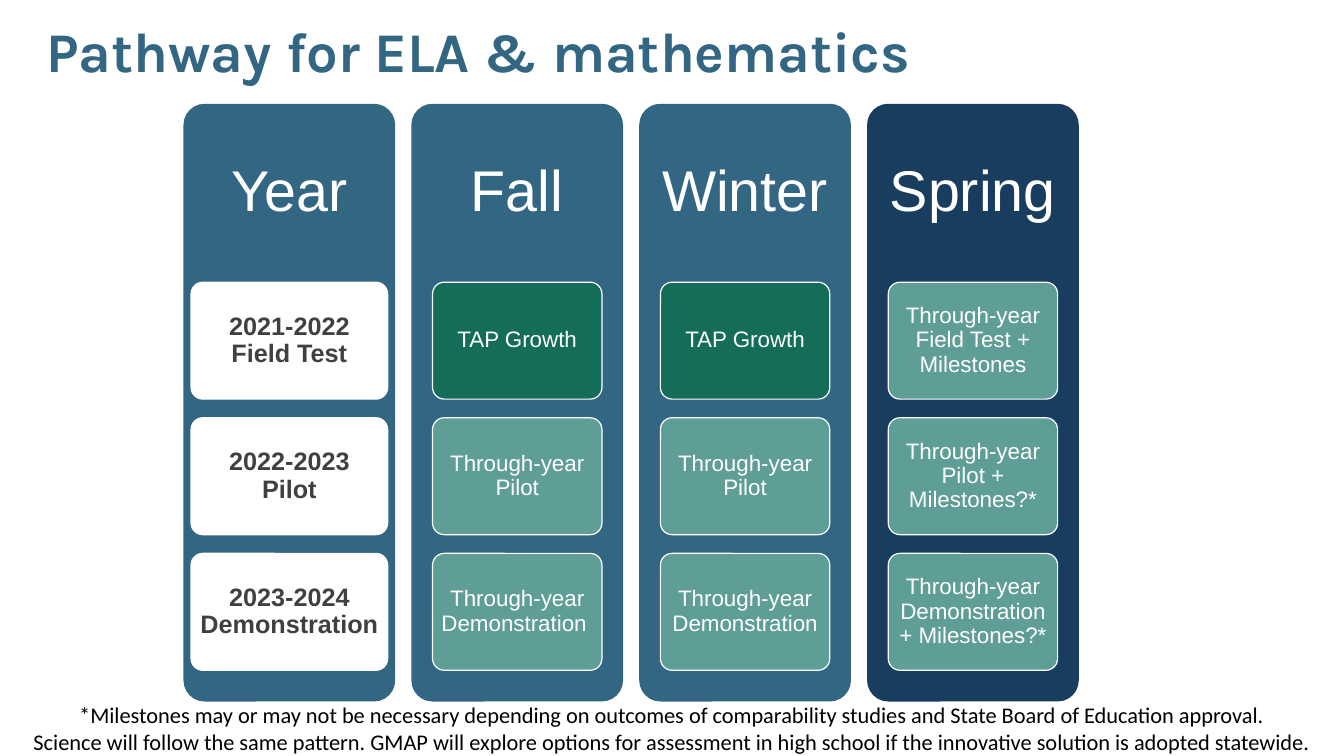
from pptx import Presentation
from pptx.dml.color import RGBColor
from pptx.enum.shapes import MSO_SHAPE
from pptx.enum.text import MSO_ANCHOR, MSO_AUTO_SIZE, PP_ALIGN
from pptx.util import Inches, Pt

WHITE, BLUE, NAVY = "FFFFFF", "336683", "183D5E"
GREEN, TEAL, GRAY = "136D58", "5F9D97", "404040"


def write(frame, lines, color, font_format, insets, anchor=MSO_ANCHOR.MIDDLE,
          align=PP_ALIGN.CENTER, spacing=0.9):
    """Fill a text frame with paragraphs; insets run left, top, right, bottom."""
    frame.text = "\n".join(lines)
    frame.word_wrap = True
    frame.auto_size = MSO_AUTO_SIZE.NONE
    frame.vertical_anchor = anchor
    for side, inset in zip(("left", "top", "right", "bottom"), insets):
        setattr(frame, f"margin_{side}", Inches(inset))
    for paragraph in frame.paragraphs:
        paragraph.alignment = align
        paragraph.line_spacing = spacing
        for run in paragraph.runs:
            run.font.color.rgb = RGBColor.from_string(color)
            for name, value in font_format.items():
                setattr(run.font, name, value)


def rounded_box(left, top, width, height, fill, outline=None):
    box = slide.shapes.add_shape(MSO_SHAPE.ROUNDED_RECTANGLE, Inches(left),
                                 Inches(top), Inches(width), Inches(height))
    box.adjustments[0] = 0.1
    box.shadow.inherit = False
    box.fill.solid()
    box.fill.fore_color.rgb = RGBColor.from_string(fill)
    if outline:
        box.line.color.rgb = RGBColor.from_string(outline)
        box.line.width = Pt(0.85)
    else:
        box.line.fill.background()
    return box


presentation = Presentation()
presentation.slide_width = Inches(13.33)
presentation.slide_height = Inches(7.5)
slide = presentation.slides.add_slide(presentation.slide_layouts[5])

# Title
title = slide.shapes.title
title.left, title.top, title.width, title.height = map(
    Inches, (0.36, 0.19, 11.15, 1.1))
write(title.text_frame, ["Pathway for ELA & mathematics"], BLUE,
      {"name": "Karla", "size": Pt(40), "bold": True}, (0.1, 0.05, 0.1, 0.05),
      MSO_ANCHOR.TOP, PP_ALIGN.LEFT, 0.89)

# Grid of seasons (columns) and school years (rows)
PANEL_LEFT, PANEL_TOP, PANEL_WIDTH, PANEL_HEIGHT = 1.82, 1.03, 2.1, 5.93
COLUMN_STEP = 2.26
CARD_TOP, CARD_HEIGHT, ROW_STEP = 2.8, 1.16, 1.345

year_font = {"name": "Arial", "size": Pt(18), "bold": True}
season_font = {"name": "Arial", "size": Pt(16)}
heading_font = {"name": "Arial", "size": Pt(41)}

# Heading, panel colour, card width, card text colour, card font, cards
columns = [
    ("Year", BLUE, 1.95, GRAY, year_font,
     [("2021-2022\vField Test", WHITE),
      ("2022-2023\vPilot", WHITE),
      ("2023-2024\vDemonstration", WHITE)]),
    ("Fall", BLUE, 1.68, WHITE, season_font,
     [("TAP Growth", GREEN),
      ("Through-year Pilot", TEAL),
      ("Through-year Demonstration ", TEAL)]),
    ("Winter", BLUE, 1.68, WHITE, season_font,
     [("TAP Growth", GREEN),
      ("Through-year Pilot", TEAL),
      ("Through-year Demonstration", TEAL)]),
    ("Spring", NAVY, 1.68, WHITE, season_font,
     [("Through-year Field Test + Milestones", TEAL),
      ("Through-year Pilot + Milestones?*", TEAL),
      ("Through-year Demonstration + Milestones?*", TEAL)]),
]

for column, (heading, panel_fill, card_width, card_color, card_font,
             cards) in enumerate(columns):
    panel_left = PANEL_LEFT + column * COLUMN_STEP
    panel = rounded_box(panel_left, PANEL_TOP, PANEL_WIDTH, PANEL_HEIGHT,
                        panel_fill)
    # The large bottom inset keeps the heading above the cards
    write(panel.text_frame, [heading], WHITE, heading_font,
          (0.1, 0.22, 0.1, 4.38))

    card_left = panel_left + (PANEL_WIDTH - card_width) / 2
    for row, (label, card_fill) in enumerate(cards):
        card = rounded_box(card_left, CARD_TOP + row * ROW_STEP, card_width,
                           CARD_HEIGHT, card_fill, WHITE)
        write(card.text_frame, [label], card_color, card_font,
              (0.05, 0.05, 0.05, 0.05))

# Footnote across the full slide width
footnote = slide.shapes.add_textbox(0, Inches(6.91), presentation.slide_width,
                                    Inches(0.64))
write(footnote.text_frame, [
    "*Milestones may or may not be necessary depending on outcomes of "
    "comparability studies and State Board of Education approval.",
    "Science will follow the same pattern. GMAP will explore options for "
    "assessment in high school if the innovative solution is adopted statewide.",
], "000000", {"name": "Calibri", "size": Pt(16)}, (0.1, 0.05, 0.1, 0.05),
      MSO_ANCHOR.TOP, spacing=1.0)

presentation.save("out.pptx")
